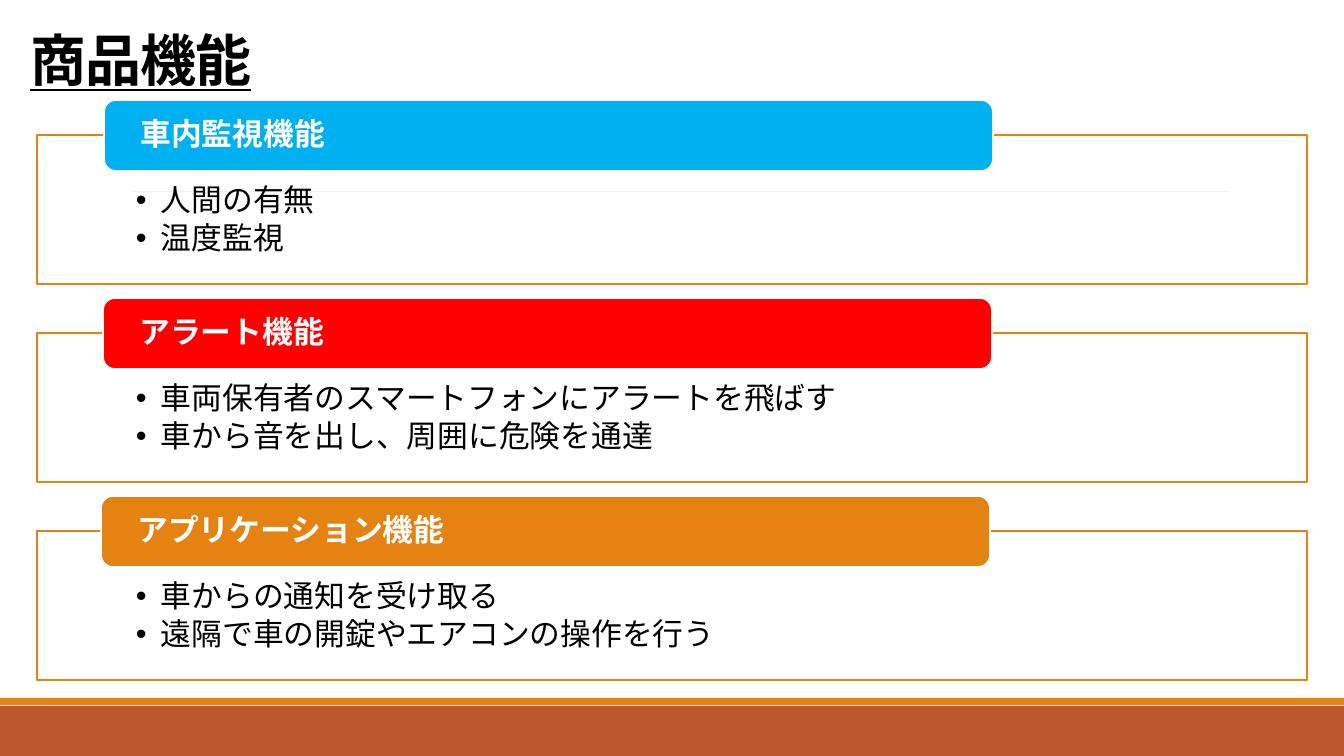
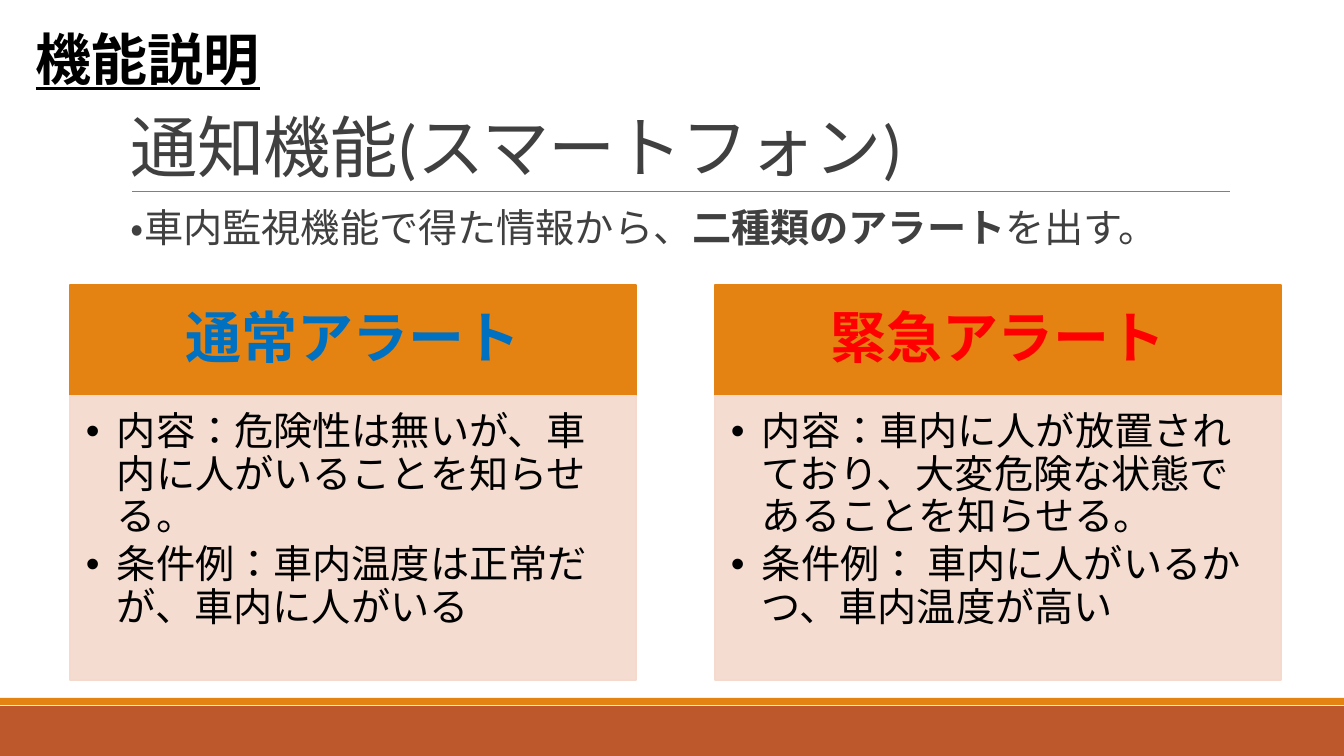
"""Builds two slides on the functions of an in-car alert product."""
from lxml.etree import SubElement
from pptx import Presentation
from pptx.dml.color import RGBColor
from pptx.enum.lang import MSO_LANGUAGE_ID as LANG
from pptx.enum.shapes import MSO_CONNECTOR as LINK, MSO_SHAPE as KIND
from pptx.enum.text import MSO_ANCHOR as ANCHOR, PP_ALIGN as ALIGN
from pptx.oxml.ns import qn
from pptx.util import Pt

PX = 914400 / 100.8
WIDE, HIGH = 1344, 756
hue = RGBColor.from_string
ORANGE, RUST, PINK = "E48312", "BD582C", "F5D9CC"
WHITE, BLACK, GREY, RED = "FFFFFF", "000000", "404040", "FF0000"
HEAD = dict(size=40, face="Noto Sans CJK JP", bold=True, under=True)


def box(page, at, fill=None, line=None, kind=KIND.RECTANGLE, alpha=None):
    """Adds a shape at px lengths, or a text box if there is no fill."""
    at = [round(v * PX) for v in at]
    if fill is None:
        return page.shapes.add_textbox(*at)
    shape = page.shapes.add_shape(kind, *at)
    shape.shadow.inherit = False
    shape.fill.solid()
    shape.fill.fore_color.rgb = hue(fill)
    if line:
        shape.line.color.rgb = hue(line)
        shape.line.width = Pt(1.25)
    else:
        shape.line.fill.background()
    if alpha:
        for tone in shape.fill._xPr.findall(qn("a:solidFill") + "/*"):
            SubElement(tone, qn("a:alpha"), val=str(alpha * 1000))
    return shape


def write(shape, text, size=22, face="Calibri", color=BLACK, bold=False,
          under=False, align=ALIGN.LEFT, anchor=ANCHOR.TOP, pad=(10, 5, 10, 5),
          lead=0.9, after=0, before=0, hang=0, left=0, track=0):
    """Writes one paragraph per line; bars switch bold on and off."""
    frame = shape.text_frame
    frame.word_wrap = True
    frame.vertical_anchor = anchor
    (frame.margin_left, frame.margin_top, frame.margin_right,
     frame.margin_bottom) = [round(v * PX) for v in pad]
    for row, line in enumerate(text.split("\n")):
        para = frame.add_paragraph() if row else frame.paragraphs[0]
        para.alignment = align
        para.line_spacing = lead
        para.space_after = Pt(after)
        para.space_before = Pt(before)
        prop = para._p.get_or_add_pPr()
        prop.set("marL", str(round((hang or left) * PX)))
        prop.set("indent", str(round(-hang * PX)))
        if hang:
            SubElement(prop, qn("a:buFont"), typeface="Arial")
            SubElement(prop, qn("a:buChar"), char="•")
        for part, words in enumerate(line.split("|")):
            run = para.add_run()
            run.text = words
            font = run.font
            font.size = Pt(size)
            font.name = face
            font.bold = bold or part % 2 == 1
            font.underline = under
            font.color.rgb = hue(color)
            font.language_id = LANG.JAPANESE
            if track:
                run._r.get_or_add_rPr().set("spc", str(track))


deck = Presentation()
deck.slide_width = round(WIDE * PX)
deck.slide_height = round(HIGH * PX)
pages = [deck.slides.add_slide(deck.slide_layouts[6]) for _ in range(2)]

for page in pages:
    box(page, (0, 706, WIDE, 50), RUST)
    box(page, (0, 698, WIDE, 7), ORANGE)
    ends = [round(v * PX) for v in (132, 191, 1230, 191)]
    rule = page.shapes.add_connector(LINK.STRAIGHT, *ends)
    rule.line.color.rgb = hue("808080")
    rule.line.width = Pt(0.5)
    SubElement(rule._element.spPr, qn("a:effectLst"))

goods, alerts = pages

write(box(goods, (20, -18, 1109, 116)), "商品機能", anchor=ANCHOR.BOTTOM,
      lead=0.85, track=-50, **HEAD)
cards = [
    ("車内監視機能", "00B0F0", "人間の有無\n温度監視"),
    ("アラート機能", RED,
     "車両保有者のスマートフォンにアラートを飛ばす\n車から音を出し、周囲に危険を通達"),
    ("アプリケーション機能", ORANGE,
     "車からの通知を受け取る\n遠隔で車の開錠やエアコンの操作を行う"),
]
for i, (name, tint, items) in enumerate(cards):
    top = 135 + 198 * i
    card = box(goods, (37, top, 1270, 149), WHITE, ORANGE, alpha=90)
    write(card, items, pad=(99, 50, 99, 17), hang=25, after=3.3)
    tab = box(goods, (104 - 3 * i // 2, top - 35, 889, 71), tint, WHITE,
              KIND.ROUNDED_RECTANGLE)
    write(tab, name, color=WHITE, bold=True, anchor=ANCHOR.MIDDLE,
          pad=(33, 0, 33, 0))

write(box(alerts, (121, 31, 1109, 160)), "通知機能(スマートフォン)", size=48,
      color=GREY, anchor=ANCHOR.BOTTOM, lead=0.85, track=-50)
write(box(alerts, (121, 204, 1109, 117)),
      "・車内監視機能で得た情報から、|二種類のアラート|を出す。", size=28,
      color=GREY, pad=(0, 5, 0, 5), left=10, before=12, after=2)
kinds = [
    ("通常アラート", "0070C0",
     "内容：危険性は無いが、車内に人がいることを知らせる。\n"
     "条件例：車内温度は正常だが、車内に人がいる"),
    ("緊急アラート", RED,
     "内容：車内に人が放置されており、大変危険な状態であることを知らせる。\n"
     "条件例： 車内に人がいるかつ、車内温度が高い"),
]
for i, (name, tint, items) in enumerate(kinds):
    x = 70 + 645 * i
    write(box(alerts, (x, 285, 566, 110), ORANGE, ORANGE), name, size=40,
          color=tint, bold=True, align=ALIGN.CENTER, anchor=ANCHOR.MIDDLE,
          pad=(31, 18, 31, 18))
    write(box(alerts, (x, 396, 566, 284), PINK, PINK, alpha=90), items,
          size=28, pad=(16, 16, 22, 24), hang=31, after=4.2)
write(box(alerts, (26, 19, 305, 78)), "機能説明", lead=1, **HEAD)

deck.save("out.pptx")
